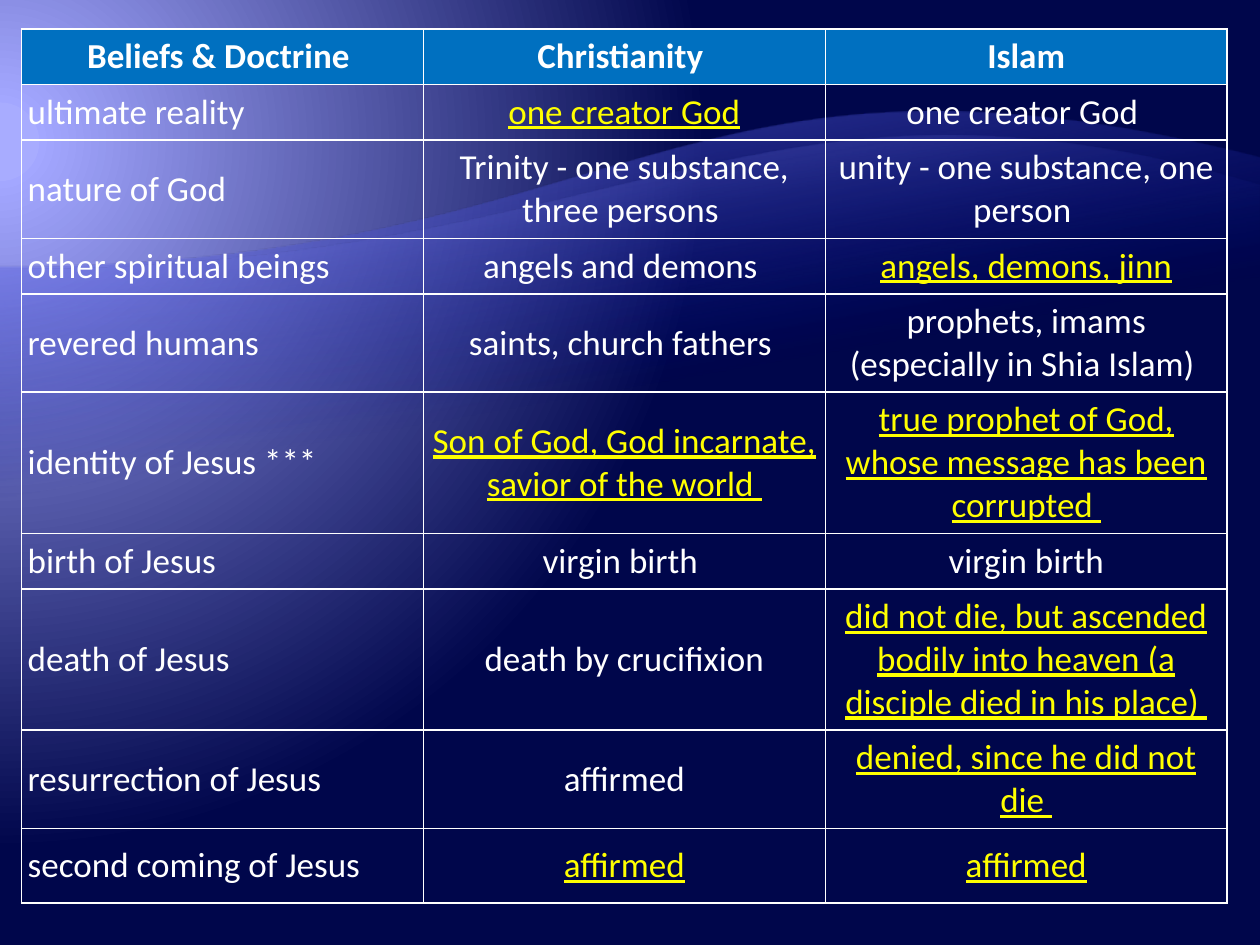
import pptx
import pptx.enum.text
import pptx.oxml
import pptx.oxml.ns
import pptx.util
from dataclasses import dataclass
from pptx.util import Inches


@dataclass(frozen=True)
class Theme:
    font: str = "Calibri"
    size: int = 20
    text: str = "FFFFFF"
    highlight: str = "FFFF00"
    header: str = "0070C0"
    border: str = "FFFFFF"
    glow: str = "A8ACFF"
    pale: str = "A3A7FF"
    night: str = "00064B"
    wave: str = "000D9E"
    wave_light: str = "797FFF"


theme = Theme()
namespace = pptx.oxml.ns.nsdecls("a")
qualified = pptx.oxml.ns.qn


def set_gradient(element, stops, direction):
    """Replace the gradient in element; stops are (position %, colour, opacity %)."""
    stop_xml = "".join(
        f'<a:gs pos="{position * 1000}"><a:srgbClr val="{colour}">'
        f'<a:alpha val="{opacity * 1000}"/></a:srgbClr></a:gs>'
        for position, colour, opacity in stops
    )
    gradient = pptx.oxml.parse_xml(
        f'<a:gradFill {namespace} rotWithShape="1"><a:gsLst>{stop_xml}</a:gsLst>{direction}</a:gradFill>'
    )
    current = next(element.iter(qualified("a:gradFill")))
    current.getparent().replace(current, gradient)


presentation = pptx.Presentation()
presentation.slide_width = Inches(10)
presentation.slide_height = Inches(7.5)
slide = presentation.slides.add_slide(presentation.slide_layouts[6])

# Background glow
slide.background.fill.gradient()
set_gradient(
    slide.element,
    [(5, theme.glow, 100), (5, theme.pale, 100), (90, theme.night, 100)],
    '<a:path path="circle"><a:fillToRect l="20000" t="30000" r="135000" b="100000"/></a:path>',
)

# Waves, outlined upside down and turned by 180 degrees:
# top, height, shoulder height, two curve controls, light colour, opacity
waves = [
    (1.25, 6.08, 5.2, (5, 5.2), (4.66, 7.28), theme.wave_light, 55),
    (1.47, 4.9, 4.24, (5, 4.24), (4.02, 6.06), theme.pale, 30),
]
for top, height, shoulder, first_control, second_control, light, opacity in waves:
    builder = slide.shapes.build_freeform(0, 0, scale=Inches(1))
    builder.add_line_segments([(10, 0), (10, shoulder), (0, height)], close=True)
    shape = builder.convert_to_shape(0, Inches(top))
    shape.shadow.inherit = False
    shape.line.fill.background()
    shape.rotation = 180
    outline = next(shape.element.iter(qualified("a:path")))
    outline.set("w", str(Inches(10)))
    outline.set("h", str(Inches(height)))
    for point, (x, y) in zip(outline.iter(qualified("a:pt")), [(0, 0), (10, 0), (10, shoulder), (0, height)]):
        point.set("x", str(Inches(x)))
        point.set("y", str(Inches(y)))
    controls = "".join(
        f'<a:pt x="{Inches(x)}" y="{Inches(y)}"/>'
        for x, y in (first_control, second_control, (0, height))
    )
    curve = pptx.oxml.parse_xml(f"<a:cubicBezTo {namespace}>{controls}</a:cubicBezTo>")
    outline.replace(outline.findall(qualified("a:lnTo"))[-1], curve)
    shape.fill.gradient()
    set_gradient(
        shape.element,
        [(65, theme.wave, 0), (100, light, opacity)],
        '<a:lin ang="4800000" scaled="0"/>',
    )

# Comparison table: row height, then the three cells
rows = [
    (0.41, "Beliefs & Doctrine ", "Christianity ", "Islam"),
    (0.41, "ultimate reality", "one creator God", "one creator God "),
    (0.73, "nature of God", "Trinity - one substance, three persons ", "unity - one substance, one person "),
    (0.41, "other spiritual beings", "angels and demons ", "angels, demons, jinn"),
    (0.73, "revered humans", "saints, church fathers ", "prophets, imams (especially in Shia Islam) "),
    (1.04, "identity of Jesus ***", "Son of God, God incarnate, savior of the world ",
     "true prophet of God, whose message has been corrupted "),
    (0.41, "birth of Jesus", "virgin birth ", "virgin birth"),
    (1.04, "death of Jesus", "death by crucifixion",
     "did not die, but ascended bodily into heaven (a disciple died in his place) "),
    (0.73, "resurrection of Jesus", "affirmed", "denied, since he did not die "),
    (0.59, "second coming of Jesus", "affirmed", "affirmed"),
]
highlighted = {(1, 1), (3, 2), (5, 1), (5, 2), (7, 2), (8, 2), (9, 1), (9, 2)}

table = slide.shapes.add_table(
    len(rows), 3, Inches(0.17), Inches(0.23), Inches(9.58), Inches(6.5)
).table
table.first_row = False
table.horz_banding = False
for column in table.columns:
    column.width = Inches(3.19)

for row_index, (height, *texts) in enumerate(rows):
    table.rows[row_index].height = Inches(height)
    for column_index, text in enumerate(texts):
        is_header = row_index == 0
        is_highlighted = (row_index, column_index) in highlighted
        cell = table.cell(row_index, column_index)
        cell.margin_left = cell.margin_right = Inches(0.05)
        cell.margin_top = cell.margin_bottom = Inches(0.05)
        cell.vertical_anchor = pptx.enum.text.MSO_ANCHOR.MIDDLE
        if is_header:
            cell.fill.solid()
            cell.fill.fore_color.rgb = pptx.dml.color.RGBColor.from_string(theme.header)
        else:
            cell.fill.background()

        cell.text_frame.text = text
        paragraph = cell.text_frame.paragraphs[0]
        if is_header or column_index > 0:
            paragraph.alignment = pptx.enum.text.PP_ALIGN.CENTER
        font = paragraph.runs[0].font
        font.name = theme.font
        font.size = pptx.util.Pt(theme.size)
        font.bold = is_header
        font.underline = is_highlighted
        font.color.rgb = pptx.dml.color.RGBColor.from_string(
            theme.highlight if is_highlighted else theme.text
        )

        properties = cell._tc.get_or_add_tcPr()
        for position, side in enumerate(("lnL", "lnR", "lnT", "lnB")):
            border = pptx.oxml.parse_xml(
                f'<a:{side} {namespace} w="{pptx.util.Pt(1)}"><a:solidFill>'
                f'<a:srgbClr val="{theme.border}"/></a:solidFill></a:{side}>'
            )
            properties.insert(position, border)

presentation.save("out.pptx")
